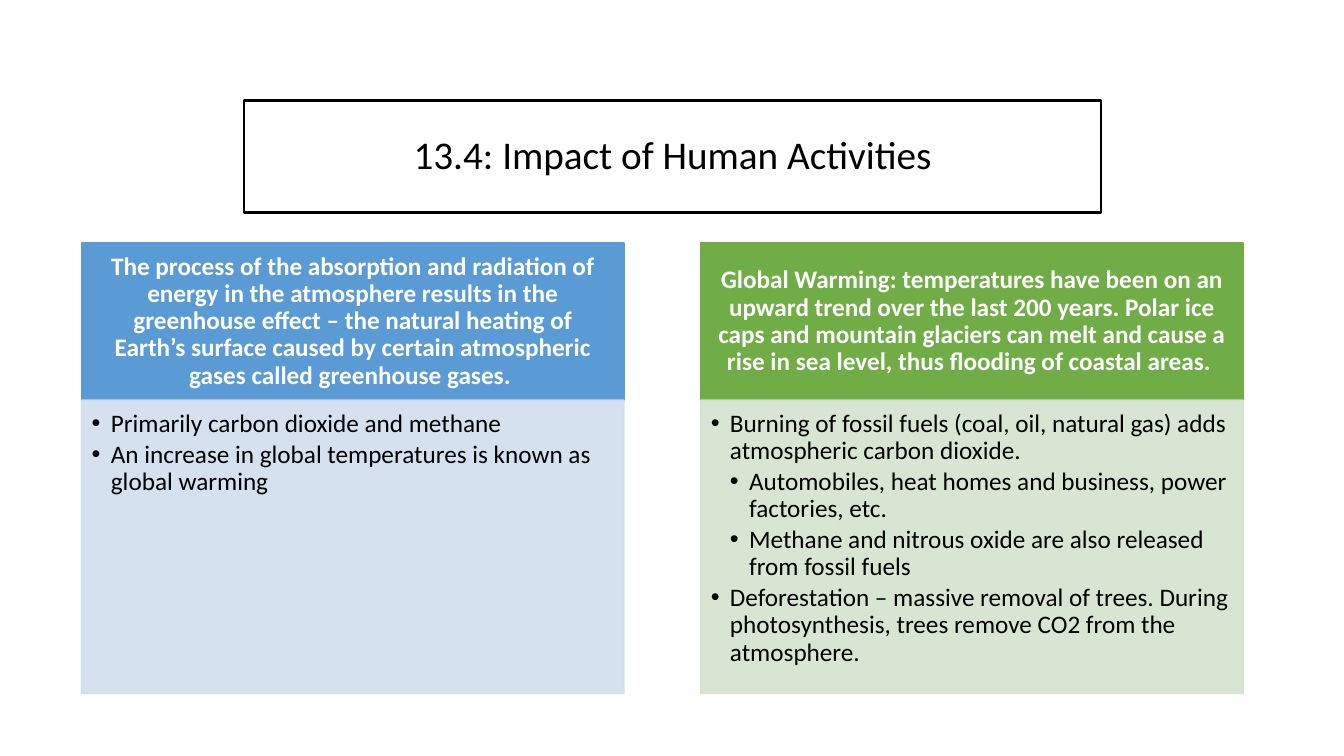
from lxml.etree import SubElement
from pptx import Presentation
from pptx.dml.color import RGBColor
from pptx.enum.text import MSO_ANCHOR as Anchor, MSO_AUTO_SIZE as AutoSize, PP_ALIGN as Align
from pptx.oxml.ns import qn
from pptx.util import Inches, Pt

COMPARISON_LAYOUT = 4
MARGIN, COLUMN, GUTTER = 0.81, 5.38, 0.76
HEADING_TOP, HEADING_HEIGHT, LIST_HEIGHT = 2.41, 1.56, 2.91
INDENT = 0.19

COLUMNS = [
    dict(
        heading="The process of the absorption and radiation of energy in the atmosphere "
                "results in the greenhouse effect – the natural heating of Earth’s surface "
                "caused by certain atmospheric gases called greenhouse gases. ",
        strong="5B9BD5", pale="D2DEEF",
        points=[
            (0, "Primarily carbon dioxide and methane"),
            (0, "An increase in global temperatures is known as global warming"),
        ],
    ),
    dict(
        heading="Global Warming: temperatures have been on an upward trend over the last "
                "200 years. Polar ice caps and mountain glaciers can melt and cause a rise "
                "in sea level, thus flooding of coastal areas. ",
        strong="70AD47", pale="D5E3CF",
        points=[
            (0, "Burning of fossil fuels (coal, oil, natural gas) adds atmospheric carbon dioxide."),
            (1, "Automobiles, heat homes and business, power factories, etc."),
            (1, "Methane and nitrous oxide are also released from fossil fuels"),
            (0, "Deforestation – massive removal of trees. During photosynthesis, trees "
                "remove CO2 from the atmosphere."),
        ],
    ),
]


def paint(fill, colour, opacity=100):
    """Give a fill a solid hex colour with an opacity in percent."""
    fill.solid()
    fill.fore_color.rgb = RGBColor.from_string(colour)
    if opacity < 100:
        tint = fill._xPr.find(qn("a:solidFill"))[0]
        SubElement(tint, qn("a:alpha"), val=str(opacity * 1000))


def panel(holder, box, fill, line, width=1, opacity=100, line_opacity=100,
          insets=(0.1, 0.05, 0.1, 0.05), anchor=Anchor.MIDDLE):
    """Place a placeholder as a filled, outlined box and return its text frame."""
    holder.left, holder.top, holder.width, holder.height = map(Inches, box)
    paint(holder.fill, fill, opacity)
    paint(holder.line.fill, line, line_opacity)
    holder.line.width = Pt(width)
    frame = holder.text_frame
    frame.word_wrap = True
    frame.auto_size = AutoSize.NONE
    frame.vertical_anchor = anchor
    (frame.margin_left, frame.margin_top,
     frame.margin_right, frame.margin_bottom) = map(Inches, insets)
    return frame


def write(paragraph, text, size=18, colour="000000", bold=False, align=Align.CENTER, after=0):
    """Write one formatted run into a paragraph."""
    paragraph.alignment = align
    paragraph.line_spacing = 0.9
    paragraph.space_before, paragraph.space_after = Pt(0), Pt(after)
    run = paragraph.add_run()
    run.text = text
    run.font.name, run.font.size, run.font.bold = "Calibri", Pt(size), bold
    run.font.color.rgb = RGBColor.from_string(colour)


def bullet(paragraph, level):
    """Give a paragraph a hanging bullet at a list level."""
    paragraph.level = level
    props = paragraph._p.get_or_add_pPr()
    props.set("marL", str(Inches(INDENT * (level + 1))))
    props.set("indent", str(-Inches(INDENT)))
    SubElement(props, qn("a:buFont"), typeface="Arial")
    SubElement(props, qn("a:buChar"), char="•")


def add_title(holder, text):
    """Fill the framed slide title."""
    frame = panel(holder, (2.42, 1, 8.5, 1.11), "FFFFFF", "000000", width=2, opacity=10)
    write(frame.paragraphs[0], text, size=28)


def add_heading(holder, left, text, colour):
    """Fill the coloured heading of a column."""
    frame = panel(holder, (left, HEADING_TOP, COLUMN, HEADING_HEIGHT), colour, colour,
                  insets=(0.14, 0.08, 0.14, 0.08))
    write(frame.paragraphs[0], text, colour="FFFFFF", bold=True)


def add_points(holder, left, points, colour):
    """Fill the pale bullet list of a column."""
    frame = panel(holder, (left, HEADING_TOP + HEADING_HEIGHT, COLUMN, LIST_HEIGHT),
                  colour, colour, opacity=90, line_opacity=90,
                  insets=(0.1, 0.1, 0.14, 0.16), anchor=Anchor.TOP)
    for number, (level, text) in enumerate(points):
        paragraph = frame.add_paragraph() if number else frame.paragraphs[0]
        write(paragraph, text, align=Align.LEFT, after=2.7)
        bullet(paragraph, level)


def main():
    """Build and save the slide."""
    deck = Presentation()
    deck.slide_width, deck.slide_height = Inches(13.33), Inches(7.5)
    slide = deck.slides.add_slide(deck.slide_layouts[COMPARISON_LAYOUT])
    add_title(slide.shapes.title, "13.4: Impact of Human Activities")
    for number, column in enumerate(COLUMNS):
        left = MARGIN + number * (COLUMN + GUTTER)
        heading, points = (slide.placeholders[2 * number + part] for part in (1, 2))
        add_heading(heading, left, column["heading"], column["strong"])
        add_points(points, left, column["points"], column["pale"])
    deck.save("out.pptx")


if __name__ == "__main__":
    main()
